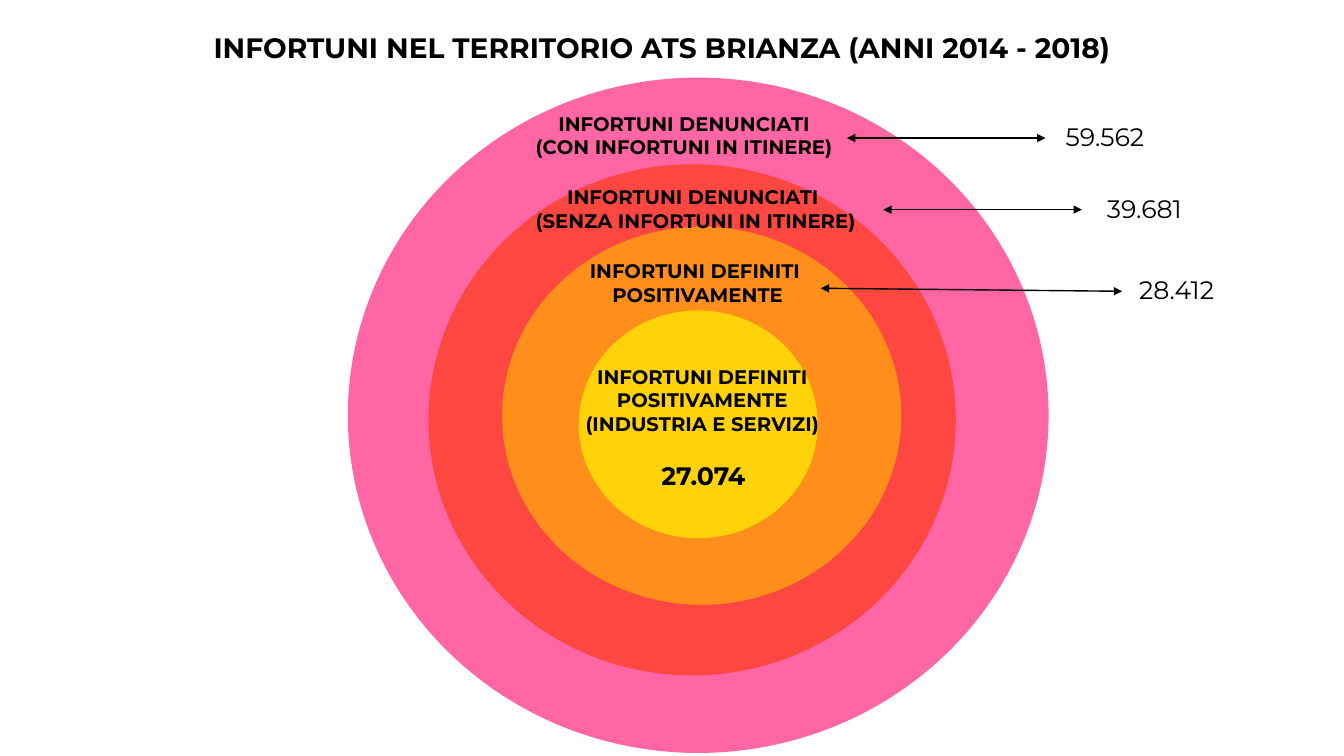
from lxml import etree
from pptx import Presentation
from pptx.dml.color import RGBColor
from pptx.enum.shapes import MSO_CONNECTOR, MSO_SHAPE
from pptx.enum.text import MSO_ANCHOR, MSO_AUTO_SIZE, PP_ALIGN
from pptx.oxml.ns import qn
from pptx.util import Inches, Pt

ELLIPSE = MSO_SHAPE.OVAL
STRAIGHT = MSO_CONNECTOR.STRAIGHT
CENTER = PP_ALIGN.CENTER
TOP = MSO_ANCHOR.TOP
FIT_SHAPE = MSO_AUTO_SIZE.SHAPE_TO_FIT_TEXT
BLANK_LAYOUT = 6

TITLE = "INFORTUNI NEL TERRITORIO ATS BRIANZA (ANNI 2014 - 2018)"

# Left, top, width, height, colour; outermost first
RINGS = [
    (3.45, 0.77, 6.95, 6.7, "FF0066"),
    (4.25, 1.63, 5.23, 5.07, "FF3300"),
    (4.98, 2.25, 3.96, 3.75, "FFC000"),
    (5.74, 3.08, 2.37, 2.26, "FFFF00"),
]

# Left, top, width, height, lines
RING_LABELS = [
    (4.93, 1.06, 3.71, 0.57, ["INFORTUNI DENUNCIATI", "(CON INFORTUNI IN ITINERE)"]),
    (4.98, 1.79, 3.84, 0.57, ["INFORTUNI DENUNCIATI ", "(SENZA INFORTUNI IN ITINERE)"]),
    (3.99, 2.52, 5.86, 0.57, ["INFORTUNI DEFINITI ", "POSITIVAMENTE"]),
    (5.17, 3.57, 3.59, 1.04, ["INFORTUNI DEFINITI POSITIVAMENTE", "(INDUSTRIA E SERVIZI)"]),
]

# Arrow start, arrow end, left and top of the value, value
CALLOUTS = [
    ((8.4, 1.37), (10.37, 1.37), (10.26, 1.15), "59.562"),
    ((8.76, 2.08), (10.73, 2.08), (10.65, 1.87), "39.681"),
    ((8.14, 2.86), (11.13, 2.89), (10.97, 2.67), "28.412"),
]


def color(hex_string):
    return RGBColor.from_string(hex_string)


class SlideBuilder:
    font_name = "Montserrat"
    ink = "000000"
    ring_opacity = 60

    def __init__(self, page):
        self.page = page

    def background(self, fill_color):
        fill = self.page.background.fill
        fill.solid()
        fill.fore_color.rgb = color(fill_color)

    def ring(self, left, top, width, height, fill_color):
        """Draw a translucent ellipse without outline."""
        ellipse = self.page.shapes.add_shape(
            ELLIPSE, Inches(left), Inches(top), Inches(width), Inches(height))
        ellipse.shadow.inherit = False
        ellipse.line.fill.background()
        ellipse.fill.solid()
        ellipse.fill.fore_color.rgb = color(fill_color)
        tint = ellipse.fill._xPr.find(qn("a:solidFill"))[0]
        etree.SubElement(tint, qn("a:alpha"), val=str(self.ring_opacity * 1000))

    def text(self, left, top, width, height, lines, size, bold=True, grow=True, space_after=0):
        box = self.page.shapes.add_textbox(
            Inches(left), Inches(top), Inches(width), Inches(height))
        frame = box.text_frame
        frame.word_wrap = True
        frame.vertical_anchor = TOP
        if grow:
            frame.auto_size = FIT_SHAPE
        frame.text = "\n".join(lines)
        for para in frame.paragraphs:
            para.alignment = CENTER
            para.space_after = Pt(space_after)
            para.font.name = self.font_name
            para.font.size = Pt(size)
            para.font.bold = bold
            para.font.color.rgb = color(self.ink)

    def double_arrow(self, start, end):
        arrow = self.page.shapes.add_connector(
            STRAIGHT, *(Inches(length) for length in start + end))
        arrow.line.color.rgb = color(self.ink)
        arrow.line.width = Pt(1)
        outline = arrow.line._get_or_add_ln()
        for tag in ("a:headEnd", "a:tailEnd"):
            etree.SubElement(outline, qn(tag), type="triangle")
        etree.SubElement(arrow._element.spPr, qn("a:effectLst"))


def main():
    deck = Presentation()
    deck.slide_width = Inches(13.33)
    deck.slide_height = Inches(7.5)
    page = deck.slides.add_slide(deck.slide_layouts[BLANK_LAYOUT])
    builder = SlideBuilder(page)

    builder.background("FFFFFF")
    for ring in RINGS:
        builder.ring(*ring)
    for label in RING_LABELS:
        builder.text(*label, size=14)
    builder.text(5.18, 4.52, 3.59, 0.4, ["27.074"], size=18)
    for start, end, (left, top), value in CALLOUTS:
        builder.double_arrow(start, end)
        builder.text(left, top, 1.4, 0.4, [value], size=18, bold=False)
    builder.text(0.34, 0.25, 12.45, 1.14, [TITLE], size=20, grow=False, space_after=7)

    deck.save("out.pptx")


if __name__ == "__main__":
    main()
